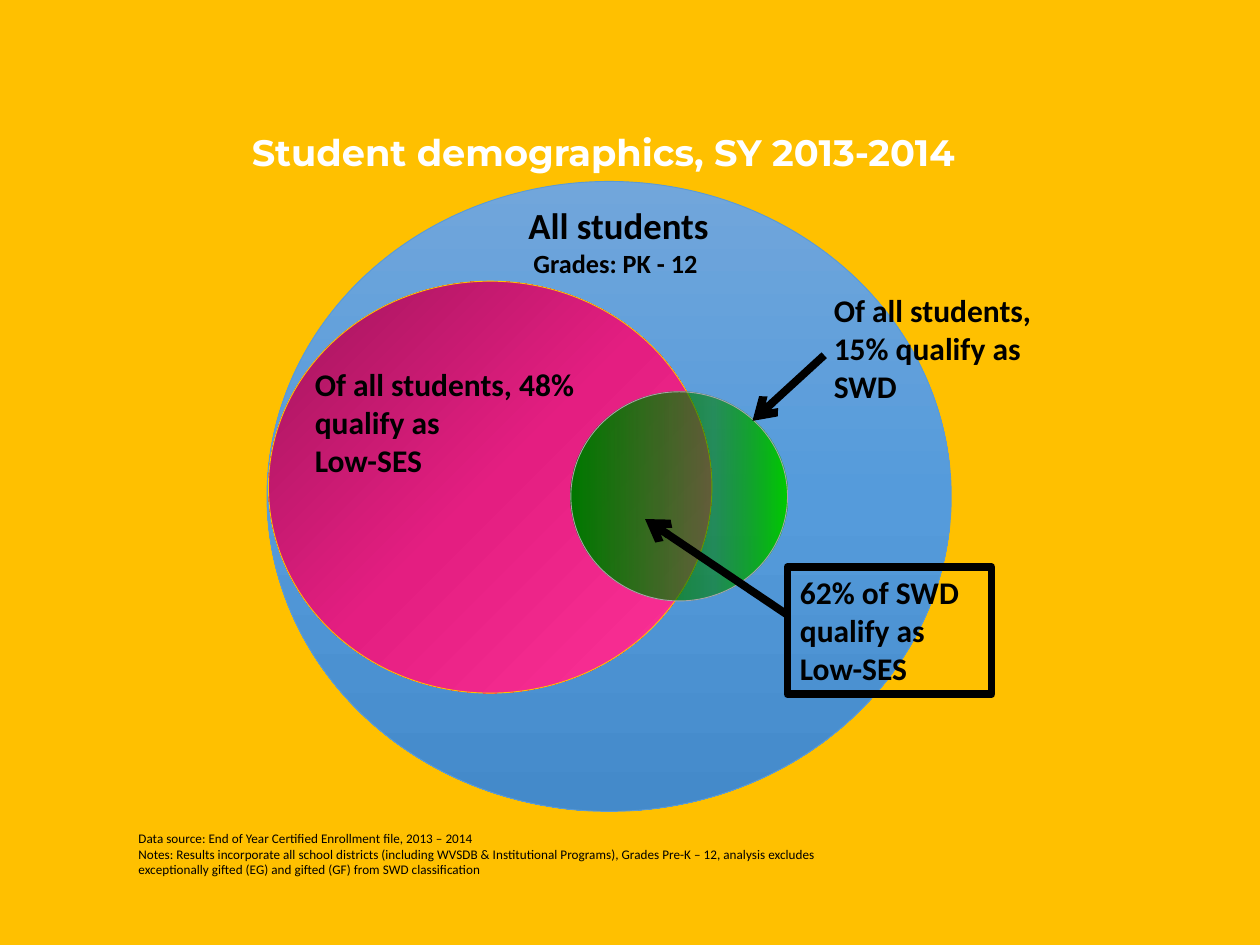
from lxml.etree import SubElement
from pptx import Presentation
from pptx.dml.color import RGBColor
from pptx.enum.shapes import MSO_CONNECTOR, MSO_SHAPE
from pptx.enum.text import MSO_ANCHOR, MSO_AUTO_SIZE, PP_ALIGN
from pptx.oxml.ns import qn
from pptx.util import Pt

HUES = {"back": "FFC000", "ink": "000000", "title": "FFFFFF",
        "all": "5B9BD5", "low": "FFC000", "swd": "A5A5A5"}
FADES = {
    "all": (90, [(0, "71A6DB", 100), (50, "559BDB", 100), (100, "448ACA", 100)]),
    "low": (45, [(0, "A0155B", 100), (50, "E41E81", 100), (100, "FF3399", 100)]),
    "swd": (0, [(0, "007900", 100), (66, "008100", 58), (100, "00CC00", 100)]),
}
BODY = {"name": "Calibri", "size": Pt(18), "bold": True}
HEAD = {"name": "Montserrat", "size": Pt(21), "bold": True}
NOTE = {"name": "Calibri", "size": Pt(7.5), "bold": False}


def shade(name):
    return RGBColor.from_string(HUES[name])


def style(item, form):
    for key, value in form.items():
        setattr(item, key, value)


def place(box, left, top, wide, high):
    return [Pt(n) for n in (box[0] + left, box[1] + top, wide, high)]


def write(shape, lines, hue="ink", grow=True, **form):
    frame = shape.text_frame
    style(frame, {
        "word_wrap": True,
        "auto_size": MSO_AUTO_SIZE.SHAPE_TO_FIT_TEXT if grow else MSO_AUTO_SIZE.NONE,
        "vertical_anchor": MSO_ANCHOR.TOP if grow else MSO_ANCHOR.MIDDLE,
    })
    for at, (text, font) in enumerate(lines):
        para = frame.paragraphs[0] if at == 0 else frame.add_paragraph()
        style(para, {"alignment": PP_ALIGN.LEFT, **form})
        run = para.add_run()
        run.text = text
        style(run.font, font)
        run.font.color.rgb = shade(hue)


def label(slide, spot, lines, **form):
    write(slide.shapes.add_textbox(*spot), lines, **form)


def circle(slide, spot, name):
    shape = slide.shapes.add_shape(MSO_SHAPE.OVAL, *spot)
    shape.shadow.inherit = False
    angle, stops = FADES[name]
    shape.fill.gradient()
    shape.fill.gradient_angle = -angle % 360
    ramp = next(shape.element.iter(qn("a:gsLst")))
    for stop in list(ramp):
        ramp.remove(stop)
    for part, hue, solid in stops:
        stop = SubElement(ramp, qn("a:gs"), pos=str(part * 1000))
        color = SubElement(stop, qn("a:srgbClr"), val=hue)
        if solid < 100:
            SubElement(color, qn("a:alpha"), val=str(solid * 1000))
    shape.line.color.rgb = shade(name)
    shape.line.width = Pt(0.5)


def arrow(slide, box, start, end):
    ends = [Pt(box[at % 2] + n) for at, n in enumerate(start + end)]
    line = slide.shapes.add_connector(MSO_CONNECTOR.STRAIGHT, *ends)
    line.line.color.rgb = shade("ink")
    line.line.width = Pt(4.5)
    props = line.element.spPr
    SubElement(props.find(qn("a:ln")), qn("a:tailEnd"), type="arrow")
    SubElement(props, qn("a:effectLst"))


def title(slide, box):
    label(slide, place(box, 0, 0, *box[2:]),
          [("Student demographics, SY 2013-2014", HEAD)],
          hue="title", grow=False, line_spacing=0.9)


def venn(slide, box):
    circle(slide, place(box, 0, 0, *box[2:]), "all")
    circle(slide, place(box, 0.8, 57, 253.4, 235.4), "low")
    circle(slide, place(box, 173.6, 120.2, 123.8, 119.5), "swd")
    label(slide, place(box, 131, 8.6, 139.7, 51.1),
          [("All students", {**BODY, "size": Pt(21)}),
           ("Grades: PK - 12 ", {**BODY, "size": Pt(15)})],
          alignment=PP_ALIGN.CENTER)
    label(slide, place(box, 20.2, 101.5, 166.3, 72.7),
          [("Of all students, 48% qualify as", BODY), ("Low-SES", BODY)])


def calls(slide, box):
    arrow(slide, box, (21, 40.3), (-20, 77.8))
    label(slide, place(box, 19.4, 0, 148.3, 72.7),
          [("Of all students, 15% qualify as SWD", BODY)])
    arrow(slide, box, (0, 188.7), (-81.4, 133.9))
    frame = slide.shapes.add_shape(
        MSO_SHAPE.RECTANGLE, *place(box, 0, 161.3, 116.6, 72.7))
    frame.shadow.inherit = False
    frame.fill.background()
    frame.line.color.rgb = shade("ink")
    frame.line.width = Pt(4.5)
    write(frame, [("62% of SWD qualify as Low-SES", BODY)])


def notes(slide, box):
    label(slide, place(box, 0, 0, *box[2:]), [
        ("Data source: End of Year Certified Enrollment file, 2013 – 2014", NOTE),
        ("Notes: Results incorporate all school districts (including WVSDB & "
         "Institutional Programs), Grades Pre-K – 12, analysis excludes "
         "exceptionally gifted (EG) and gifted (GF) from SWD classification", NOTE),
    ])


def main():
    deck = Presentation()
    style(deck, {"slide_width": Pt(720), "slide_height": Pt(540)})
    slide = deck.slides.add_slide(deck.slide_layouts[6])
    slide.background.fill.solid()
    slide.background.fill.fore_color.rgb = shade("back")
    venn(slide, (152.6, 103.7, 391, 360))
    title(slide, (136.8, 64.8, 450, 47.5))
    calls(slide, (450, 162.7, 167.7, 234))
    notes(slide, (72, 470.9, 423.4, 34.6))
    deck.save("out.pptx")


if __name__ == "__main__":
    main()
